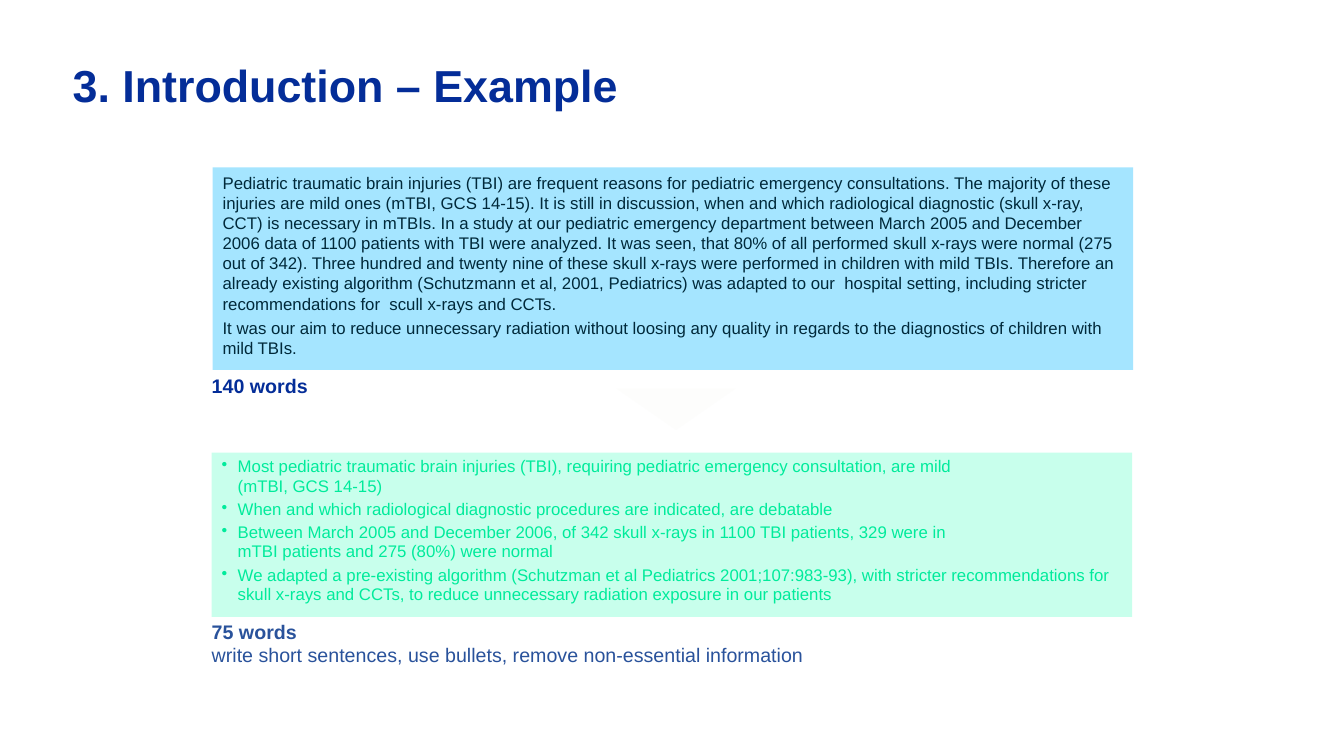
import dataclasses

import lxml.etree
import pptx
import pptx.dml.color
import pptx.enum.shapes
import pptx.enum.text
import pptx.oxml.ns
import pptx.util

Inches = pptx.util.Inches
Pt = pptx.util.Pt
MARGIN_X = 0.1
MARGIN_Y = 0.05
BULLET_INDENT = 0.16
COLUMN_LEFT = 2.1
PANEL_WIDTH = 9.13


@dataclasses.dataclass(frozen=True)
class Area:
    left: float
    top: float
    width: float
    height: float

    def lengths(self) -> tuple:
        return tuple(Inches(value) for value in dataclasses.astuple(self))


@dataclasses.dataclass(frozen=True)
class Span:
    text: str
    size: float
    color: str
    bold: bool = False


@dataclasses.dataclass(frozen=True)
class Panel:
    area: Area
    fill: str
    color: str
    paragraphs: tuple[str, ...]
    bulleted: bool = False


@dataclasses.dataclass(frozen=True)
class Caption:
    area: Area
    spans: tuple[Span, ...]


TITLE_AREA = Area(0.72, 0.57, 11.89, 1.06)
TITLE = Span("3. Introduction – Example", 32, "042D98", True)
ARROW_AREA = Area(6.5, 3.47, 0.41, 1.18)

PANELS = (
    Panel(
        Area(2.11, 1.66, PANEL_WIDTH, 2.01), "A5E5FF", "00293A",
        (
            "Pediatric traumatic brain injuries (TBI) are frequent reasons for pediatric "
            "emergency consultations. The majority of these injuries are mild ones (mTBI, "
            "GCS 14-15). It is still in discussion, when and which radiological diagnostic "
            "(skull x-ray, CCT) is necessary in mTBIs. In a study at our pediatric emergency "
            "department between March 2005 and December 2006 data of 1100 patients with TBI "
            "were analyzed. It was seen, that 80% of all performed skull x-rays were normal "
            "(275 out of 342). Three hundred and twenty nine of these skull x-rays were "
            "performed in children with mild TBIs. Therefore an already existing algorithm "
            "(Schutzmann et al, 2001, Pediatrics) was adapted to our  hospital setting, "
            "including stricter recommendations for  scull x-rays and CCTs.",
            "It was our aim to reduce unnecessary radiation without loosing any quality in "
            "regards to the diagnostics of children with mild TBIs.",
        ),
    ),
    Panel(
        Area(COLUMN_LEFT, 4.49, PANEL_WIDTH, 1.63), "C8FFEC", "00EB9B",
        (
            "Most pediatric traumatic brain injuries (TBI), requiring pediatric emergency "
            "consultation, are mild \n(mTBI, GCS 14-15)",
            "When and which radiological diagnostic procedures are indicated, are debatable",
            "Between March 2005 and December 2006, of 342 skull x-rays in 1100 TBI patients, "
            "329 were in \nmTBI patients and 275 (80%) were normal",
            "We adapted a pre-existing algorithm (Schutzman et al Pediatrics "
            "2001;107:983-93), with stricter recommendations for skull x-rays and CCTs, to "
            "reduce unnecessary radiation exposure in our patients",
        ),
        bulleted=True,
    ),
)

CAPTIONS = (
    Caption(Area(COLUMN_LEFT, 3.73, 2.13, 0.37), (Span("140 words", 14, "042D98", True),)),
    Caption(
        Area(COLUMN_LEFT, 6.17, 6.61, 0.61),
        (
            Span("75 words\n", 14, "29529B", True),
            Span("write short sentences, use bullets, remove non-essential information",
                 14, "29529B"),
        ),
    ),
)


def rgb(color: str) -> pptx.dml.color.RGBColor:
    return pptx.dml.color.RGBColor.from_string(color)


def add_span(para, span: Span) -> None:
    for index, line in enumerate(span.text.split("\n")):
        if index:
            para.add_line_break()
        if line:
            run = para.add_run()
            run.text = line
            run.font.name = "Arial"
            run.font.size = Pt(span.size)
            run.font.bold = span.bold
            run.font.color.rgb = rgb(span.color)


def set_frame(frame, margin_x: float = 0, margin_y: float = 0) -> None:
    frame.word_wrap = True
    frame.auto_size = pptx.enum.text.MSO_AUTO_SIZE.NONE
    frame.vertical_anchor = pptx.enum.text.MSO_ANCHOR.TOP
    frame.margin_left = frame.margin_right = Inches(margin_x)
    frame.margin_top = frame.margin_bottom = Inches(margin_y)


def add_bullet(para) -> None:
    properties = para._p.get_or_add_pPr()
    properties.set("marL", str(Inches(BULLET_INDENT)))
    properties.set("indent", str(-Inches(BULLET_INDENT)))
    bullet = lxml.etree.SubElement(properties, pptx.oxml.ns.qn("a:buChar"))
    bullet.set("char", "•")


def add_filled_shape(page, kind, area: Area, fill: str):
    shape = page.shapes.add_shape(kind, *area.lengths())
    shape.shadow.inherit = False
    shape.fill.solid()
    shape.fill.fore_color.rgb = rgb(fill)
    shape.line.fill.background()
    return shape


def set_title(page) -> None:
    title = page.shapes.title
    title.left, title.top, title.width, title.height = TITLE_AREA.lengths()
    set_frame(title.text_frame)
    para = title.text_frame.paragraphs[0]
    para.alignment = pptx.enum.text.PP_ALIGN.LEFT
    add_span(para, TITLE)


def add_panel(page, panel: Panel) -> None:
    box = add_filled_shape(
        page, pptx.enum.shapes.MSO_SHAPE.RECTANGLE, panel.area, panel.fill)
    frame = box.text_frame
    set_frame(frame, MARGIN_X, MARGIN_Y)
    for index, text in enumerate(panel.paragraphs):
        para = frame.add_paragraph() if index else frame.paragraphs[0]
        if panel.bulleted:
            add_bullet(para)
            para.line_spacing = 0.95
        para.alignment = pptx.enum.text.PP_ALIGN.LEFT
        para.space_after = Pt(3)
        add_span(para, Span(text, 12, panel.color))


def add_caption(page, caption: Caption) -> None:
    box = page.shapes.add_textbox(*caption.area.lengths())
    set_frame(box.text_frame)
    para = box.text_frame.paragraphs[0]
    para.line_spacing = 0.95
    for span in caption.spans:
        add_span(para, span)


def add_down_arrow(page) -> None:
    arrow = add_filled_shape(
        page, pptx.enum.shapes.MSO_SHAPE.PENTAGON, ARROW_AREA, "FDFDFC")
    arrow.adjustments[0] = 1
    arrow.rotation = 90


def main() -> None:
    deck = pptx.Presentation()
    deck.slide_width = Inches(13.33)
    deck.slide_height = Inches(7.5)
    page = deck.slides.add_slide(deck.slide_layouts[5])
    set_title(page)
    for panel in PANELS:
        add_panel(page, panel)
    for caption in CAPTIONS:
        add_caption(page, caption)
    add_down_arrow(page)
    deck.save("out.pptx")


if __name__ == "__main__":
    main()
